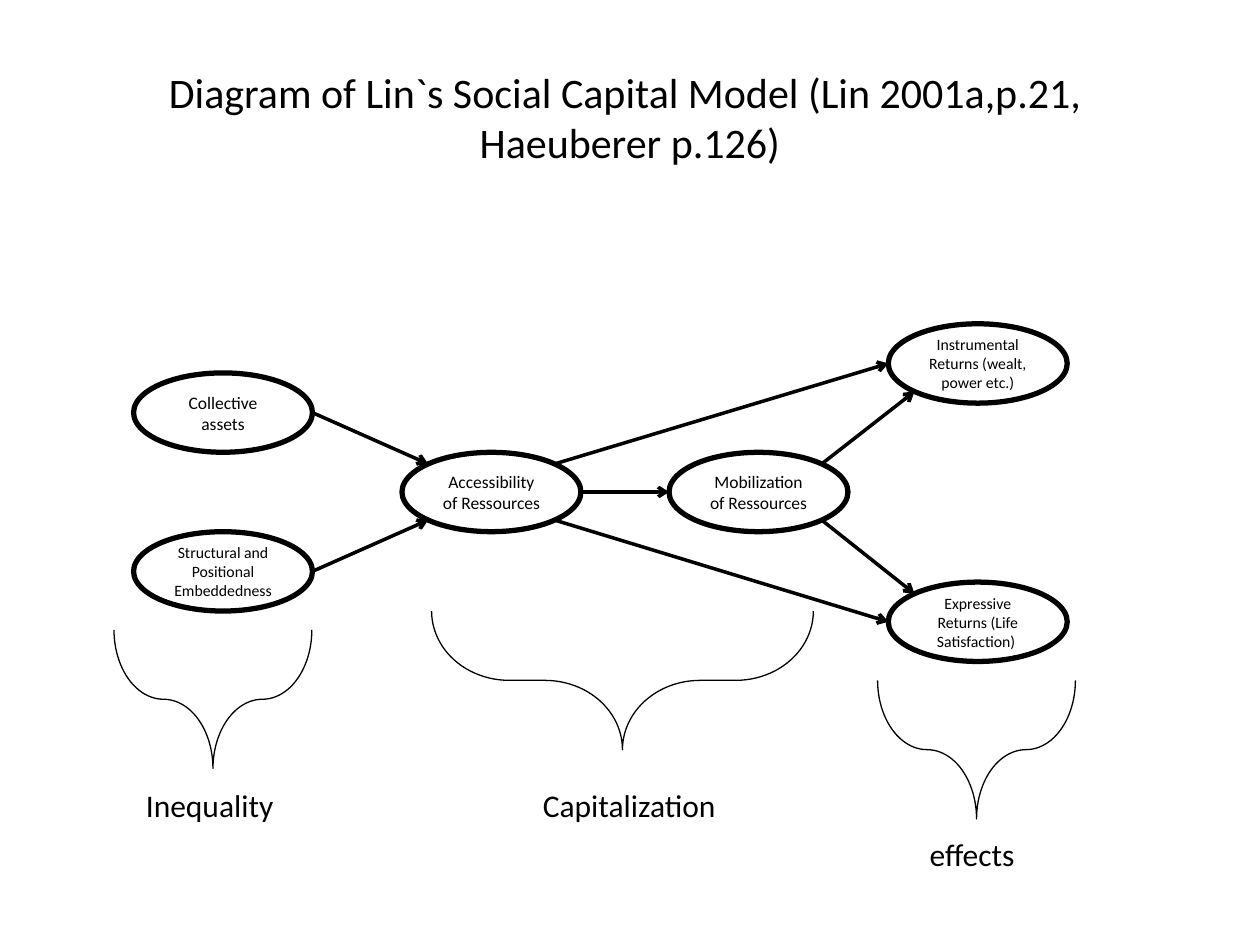
from math import sqrt

from lxml.etree import SubElement
from pptx import Presentation
from pptx.dml.color import RGBColor
from pptx.enum.shapes import MSO_CONNECTOR, MSO_SHAPE
from pptx.enum.text import MSO_ANCHOR, PP_ALIGN
from pptx.oxml.ns import qn
from pptx.util import Inches, Pt

# Content
TITLE = "Diagram of Lin`s Social Capital Model (Lin 2001a,p.21, \vHaeuberer p.126)"
BLACK, WHITE = "000000", "FFFFFF"
NODE_WIDTH, NODE_HEIGHT = 1.42, 0.63
NODES = {  # name: (left, top, text, font size)
    "assets": (1.06, 2.96, "Collective assets", 10),
    "embeddedness": (1.06, 4.22, "Structural and Positional Embeddedness", 9),
    "access": (3.19, 3.59, "Accessibility of Ressources", 10),
    "instrumental": (7.05, 2.57, "Instrumental Returns (wealt, power etc.)", 9),
    "expressive": (7.05, 4.62, "Expressive Returns (Life Satisfaction) ", 9),
    "mobilization": (5.31, 3.59, "Mobilization of Ressources", 10),
}
ARROWS = [  # from node, side, to node, side
    ("access", "right", "mobilization", "left"),
    ("mobilization", "top right", "instrumental", "bottom left"),
    ("assets", "right", "access", "top left"),
    ("embeddedness", "right", "access", "bottom left"),
    ("access", "top right", "instrumental", "left"),
    ("mobilization", "bottom right", "expressive", "top left"),
    ("access", "bottom right", "expressive", "left"),
]
BRACE_DEPTH = 1.1
STAGES = [  # brace centre x, brace top, brace span, label, label left, label top, label width
    (7.75, 5.4, 1.57, "effects", 7.28, 6.58, 0.89),
    (1.69, 5.0, 1.57, "Inequality", 1.06, 6.19, 1.23),
    (4.94, 4.85, 3.03, "Capitalization", 4.21, 6.19, 1.59),
]


def color(value):
    return RGBColor.from_string(value)


def set_line(shape, width):
    shape.line.color.rgb = color(BLACK)
    shape.line.width = Pt(width)


def write(shape, text, size, align=PP_ALIGN.CENTER, anchor=MSO_ANCHOR.MIDDLE, wrap=True):
    frame = shape.text_frame
    frame.word_wrap = wrap
    frame.vertical_anchor = anchor
    frame.text = text
    paragraph = frame.paragraphs[0]
    paragraph.alignment = align
    paragraph.font.name = "Calibri"
    paragraph.font.size = Pt(size)
    paragraph.font.color.rgb = color(BLACK)


def edge_point(name, side):
    """Point on the ellipse of a node; corners lie on its 45 degree rays."""
    left, top = NODES[name][:2]
    across = ("right" in side) - ("left" in side)
    down = ("bottom" in side) - ("top" in side)
    reach = 2 * sqrt(across**2 + down**2)
    x = left + NODE_WIDTH * (0.5 + across / reach)
    y = top + NODE_HEIGHT * (0.5 + down / reach)
    return Inches(x), Inches(y)


presentation = Presentation()
presentation.slide_width = Inches(10)
presentation.slide_height = Inches(7.5)
slide = presentation.slides.add_slide(presentation.slide_layouts[6])
shapes = slide.shapes

# Title
title = shapes.add_textbox(Inches(0.5), Inches(0.3), Inches(9), Inches(1.25))
write(title, TITLE, 24)

# Nodes
for left, top, text, size in NODES.values():
    node = shapes.add_shape(MSO_SHAPE.OVAL, Inches(left), Inches(top),
                            Inches(NODE_WIDTH), Inches(NODE_HEIGHT))
    node.shadow.inherit = False
    node.fill.solid()
    node.fill.fore_color.rgb = color(WHITE)
    set_line(node, 3)
    write(node, text, size)

# Arrows
for source, source_side, target, target_side in ARROWS:
    arrow = shapes.add_connector(MSO_CONNECTOR.STRAIGHT,
                                 *edge_point(source, source_side),
                                 *edge_point(target, target_side))
    set_line(arrow, 2)
    SubElement(arrow.line._get_or_add_ln(), qn("a:tailEnd"), type="arrow")
    SubElement(arrow._element.spPr, qn("a:effectLst"))

# Braces, turned to point down, and their labels
for center, brace_top, span, label, left, top, width in STAGES:
    middle = brace_top + BRACE_DEPTH / 2
    brace = shapes.add_shape(MSO_SHAPE.RIGHT_BRACE,
                             Inches(center - BRACE_DEPTH / 2), Inches(middle - span / 2),
                             Inches(BRACE_DEPTH), Inches(span))
    brace.rotation = 90
    brace.adjustments[0] = 0.56
    brace.adjustments[1] = 0.5
    brace.shadow.inherit = False
    brace.fill.background()
    set_line(brace, 0.75)

    caption = shapes.add_textbox(Inches(left), Inches(top), Inches(width), Inches(0.4))
    write(caption, label, 18, PP_ALIGN.LEFT, MSO_ANCHOR.TOP, wrap=False)

presentation.save("out.pptx")
